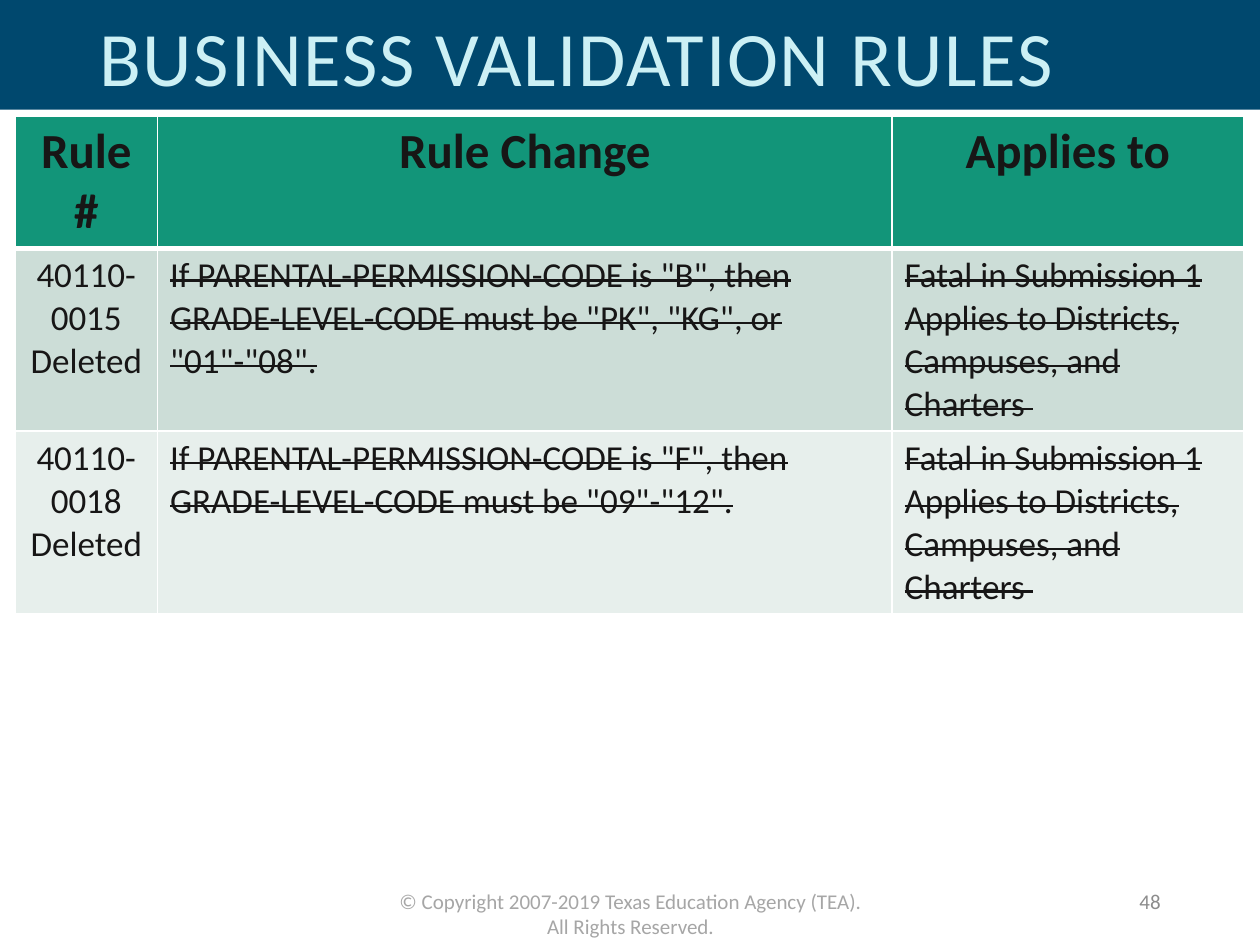
from dataclasses import dataclass

from lxml import etree
from pptx import Presentation
from pptx.dml.color import RGBColor
from pptx.enum import shapes, text
from pptx.oxml import ns
from pptx.util import Inches, Pt


@dataclass(frozen=True)
class Theme:
    font: str = "Calibri"
    banner: str = "00486E"
    title: str = "CCF0F5"
    header: str = "129579"
    bands: tuple = ("CCDDD7", "E7EFEC")
    ink: str = "171616"
    border: str = "FFFFFF"
    footer: str = "A6A6A6"
    number: str = "8C8C8C"
    title_size: int = 44
    header_size: int = 28
    body_size: int = 20
    footer_size: int = 12


THEME = Theme()
LEFT, CENTER, RIGHT = text.PP_ALIGN.LEFT, text.PP_ALIGN.CENTER, text.PP_ALIGN.RIGHT
COLUMN_WIDTHS = (1.13, 5.83, 2.79)
ROW_HEIGHTS = (1.05, 1.45, 1.45)
HEADINGS = ("Rule #", "Rule Change", "Applies to")
APPLIES_TO = "Fatal in Submission 1\nApplies to Districts, Campuses, and Charters "
RULES = (
    ("40110-0015 Deleted",
     'If PARENTAL-PERMISSION-CODE is "B", then GRADE-LEVEL-CODE must be "PK", "KG", or "01"-"08".',
     APPLIES_TO),
    ("40110-0018 Deleted",
     'If PARENTAL-PERMISSION-CODE is "F", then GRADE-LEVEL-CODE must be "09"-"12".',
     APPLIES_TO),
)


def write(frame, words, size, color, align=LEFT, bold=False, **run_attributes):
    """Fill a text frame, one paragraph a line, and format its runs."""
    frame.text = words
    frame.word_wrap = True
    for paragraph in frame.paragraphs:
        paragraph.alignment = align
        for run in paragraph.runs:
            run.font.name = THEME.font
            run.font.size = Pt(size)
            run.font.bold = bold
            run.font.color.rgb = RGBColor.from_string(color)
            for name, value in run_attributes.items():
                run.font._element.set(name, value)


def add_text(slide, box, words, size, color, align=LEFT,
             anchor=text.MSO_ANCHOR.MIDDLE, **run_attributes):
    frame = slide.shapes.add_textbox(*map(Inches, box)).text_frame
    write(frame, words, size, color, align, **run_attributes)
    frame.vertical_anchor = anchor
    return frame


def add_banner(slide, left, top, width, height):
    banner = slide.shapes.add_shape(
        shapes.MSO_SHAPE.RECTANGLE, *map(Inches, (left, top, width, height)))
    banner.shadow.inherit = False
    banner.fill.solid()
    banner.fill.fore_color.rgb = RGBColor.from_string(THEME.banner)
    banner.line.fill.background()
    frame = add_text(slide, (left + 0.69, top + 0.05, 8, height),
                     "BUSINESS VALIDATION RULES", THEME.title_size, THEME.title, spc="100")
    frame.paragraphs[0].line_spacing = 0.9


def style_cell(cell, fill, top_width, bottom_width):
    """Draw the cell borders, then the fill that follows them in the XML."""
    properties = cell._tc.get_or_add_tcPr()
    widths = {"lnL": 1, "lnR": 1, "lnT": top_width, "lnB": bottom_width}
    for side, width in widths.items():
        line = etree.SubElement(properties, ns.qn(f"a:{side}"), w=str(Pt(width)))
        solid = etree.SubElement(line, ns.qn("a:solidFill"))
        etree.SubElement(solid, ns.qn("a:srgbClr"), val=THEME.border)
    cell.fill.solid()
    cell.fill.fore_color.rgb = RGBColor.from_string(fill)


def add_rules_table(slide, left, top):
    rows = (HEADINGS, *RULES)
    box = (left, top, sum(COLUMN_WIDTHS), sum(ROW_HEIGHTS))
    table = slide.shapes.add_table(
        len(rows), len(HEADINGS), *map(Inches, box)).table
    for column, width in zip(table.columns, COLUMN_WIDTHS):
        column.width = Inches(width)
    for row, height in zip(table.rows, ROW_HEIGHTS):
        row.height = Inches(height)

    for r, row in enumerate(rows):
        for c, words in enumerate(row):
            cell = table.cell(r, c)
            if r == 0:
                write(cell.text_frame, words, THEME.header_size, THEME.ink, CENTER, bold=True)
                style_cell(cell, THEME.header, 1, 3)
                continue
            if c == 0:
                write(cell.text_frame, words, THEME.body_size, THEME.ink, CENTER)
            else:
                write(cell.text_frame, words, THEME.body_size, THEME.ink, strike="sngStrike")
            style_cell(cell, THEME.bands[(r - 1) % 2], 3 if r == 1 else 1, 1)


def add_footer(slide, left, top):
    add_text(slide, (left, top + 0.05, 3.93, 0.3),
             "© Copyright 2007-2019 Texas Education Agency (TEA). All Rights Reserved.",
             THEME.footer_size, THEME.footer, CENTER, text.MSO_ANCHOR.TOP)
    add_text(slide, (left + 4.02, top, 2.25, 0.4), "48",
             THEME.footer_size, THEME.number, RIGHT)


def main():
    presentation = Presentation()
    presentation.slide_width, presentation.slide_height = Inches(10), Inches(7.5)
    slide = presentation.slides.add_slide(presentation.slide_layouts[6])
    add_banner(slide, 0, 0, 10, 0.87)
    add_rules_table(slide, 0.12, 0.92)
    add_footer(slide, 3.04, 6.95)
    presentation.save("out.pptx")


if __name__ == "__main__":
    main()
